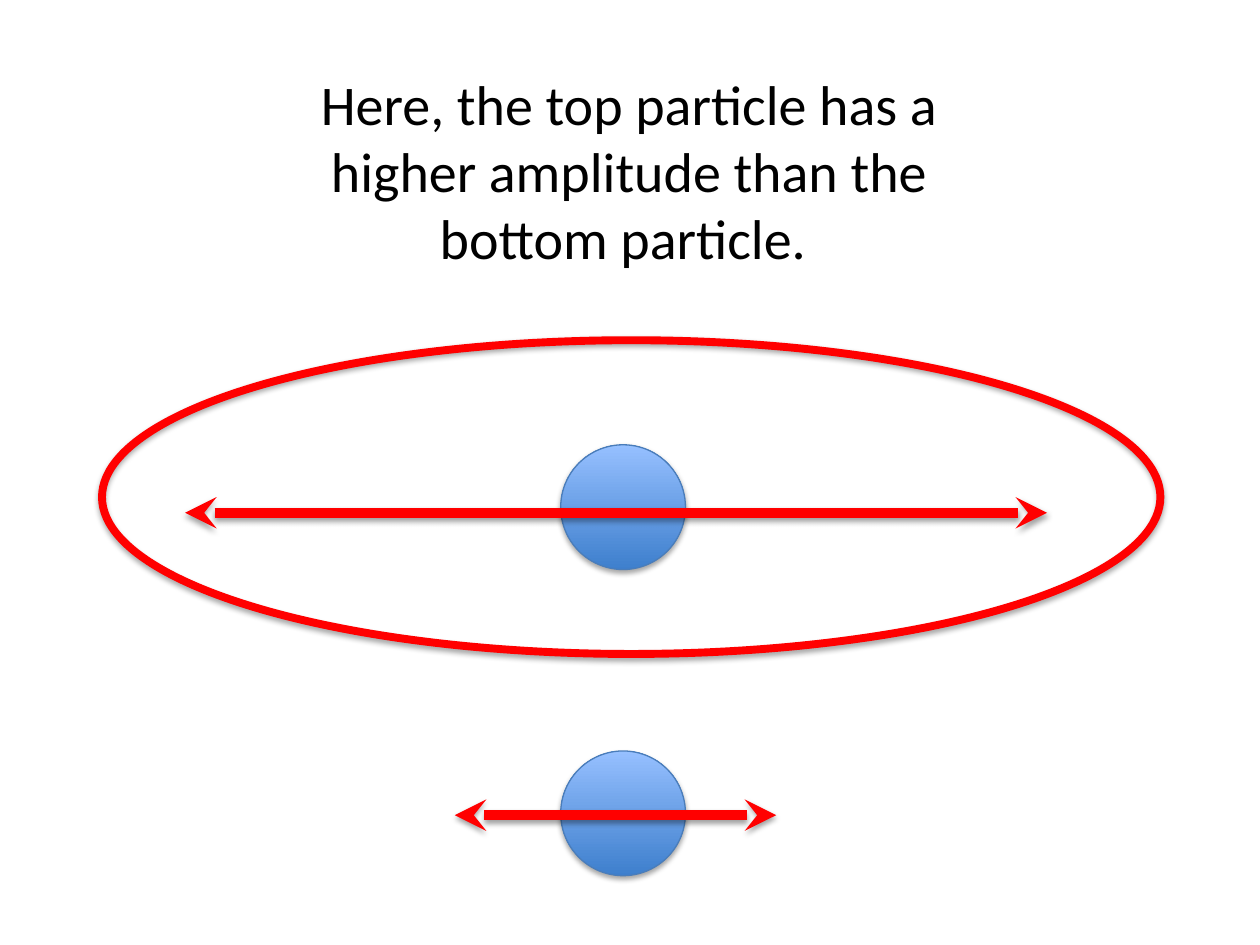
import pptx
import pptx.util
import pptx.dml.color
import pptx.enum.shapes
import pptx.enum.text
import pptx.oxml
import pptx.oxml.ns

Inches, Pt = pptx.util.Inches, pptx.util.Pt
RED, EDGE, BLACK = "FF0000", "4A7DBA", "000000"
GRAD = ("3E7FCD", "96C0FF")

TEXT = "Here, the top particle has a higher amplitude than the bottom particle. "
TITLE = (1.98, 0.5, 6.03, 1.72)
SIZE, LEFT = 0.99, 4.45
BALLS = [3.53, 5.96]  # top of each particle
ARROWS = [(1.47, 8.31, 4.07), (3.61, 6.16, 6.47)]  # start, end, height
RING = (0.81, 2.7, 8.4, 2.49)


def color(code):
    return pptx.dml.color.RGBColor.from_string(code)


def stroke(shape, code, width):
    shape.line.color.rgb = color(code)
    shape.line.width = Pt(width)


def shade(shape, dist, alpha):
    """Add a soft black shadow straight below the shape."""
    shape._element.spPr.append(pptx.oxml.parse_xml(
        f'<a:effectLst {pptx.oxml.ns.nsdecls("a")}>'
        f'<a:outerShdw blurRad="{Pt(3.1)}" dist="{Pt(dist)}" dir="5400000" rotWithShape="0">'
        f'<a:srgbClr val="{BLACK}"><a:alpha val="{alpha * 1000}"/></a:srgbClr>'
        '</a:outerShdw></a:effectLst>'))


def oval(slide, box, code, width, grad=None):
    shape = slide.shapes.add_shape(
        pptx.enum.shapes.MSO_SHAPE.OVAL, *map(Inches, box))
    if grad:
        shape.fill.gradient()
        shape.fill.gradient_angle = 90
        for stop, tone in zip(shape.fill.gradient_stops, grad):
            stop.color.rgb = color(tone)
    else:
        shape.fill.background()
    stroke(shape, code, width)
    shade(shape, 1.8, 35)


def arrow(slide, start, end, y):
    line = slide.shapes.add_connector(
        pptx.enum.shapes.MSO_CONNECTOR.STRAIGHT,
        Inches(start), Inches(y), Inches(end), Inches(y))
    stroke(line, RED, 6)
    for tag in ("headEnd", "tailEnd"):
        line.line._get_or_add_ln().append(pptx.oxml.parse_xml(
            f'<a:{tag} {pptx.oxml.ns.nsdecls("a")} type="stealth"/>'))
    shade(line, 1.6, 37)


def write(shape, text, *, box, size, font, code):
    shape.left, shape.top, shape.width, shape.height = map(Inches, box)
    frame = shape.text_frame
    frame.text = text
    frame.word_wrap = True
    frame.auto_size = pptx.enum.text.MSO_AUTO_SIZE.SHAPE_TO_FIT_TEXT
    frame.vertical_anchor = pptx.enum.text.MSO_ANCHOR.TOP
    par = frame.paragraphs[0]
    par.alignment = pptx.enum.text.PP_ALIGN.CENTER
    face = par.runs[0].font
    face.size, face.name = Pt(size), font
    face.color.rgb = color(code)


def main():
    deck = pptx.Presentation()
    deck.slide_width, deck.slide_height = Inches(10), Inches(7.5)
    slide = deck.slides.add_slide(deck.slide_layouts[5])
    for top in BALLS:
        oval(slide, (LEFT, top, SIZE, SIZE), EDGE, 0.75, GRAD)
    for ends in ARROWS:
        arrow(slide, *ends)
    oval(slide, RING, RED, 4.5)
    write(slide.shapes.title, TEXT, box=TITLE, size=32, font="Calibri", code=BLACK)
    deck.save("out.pptx")


if __name__ == "__main__":
    main()
